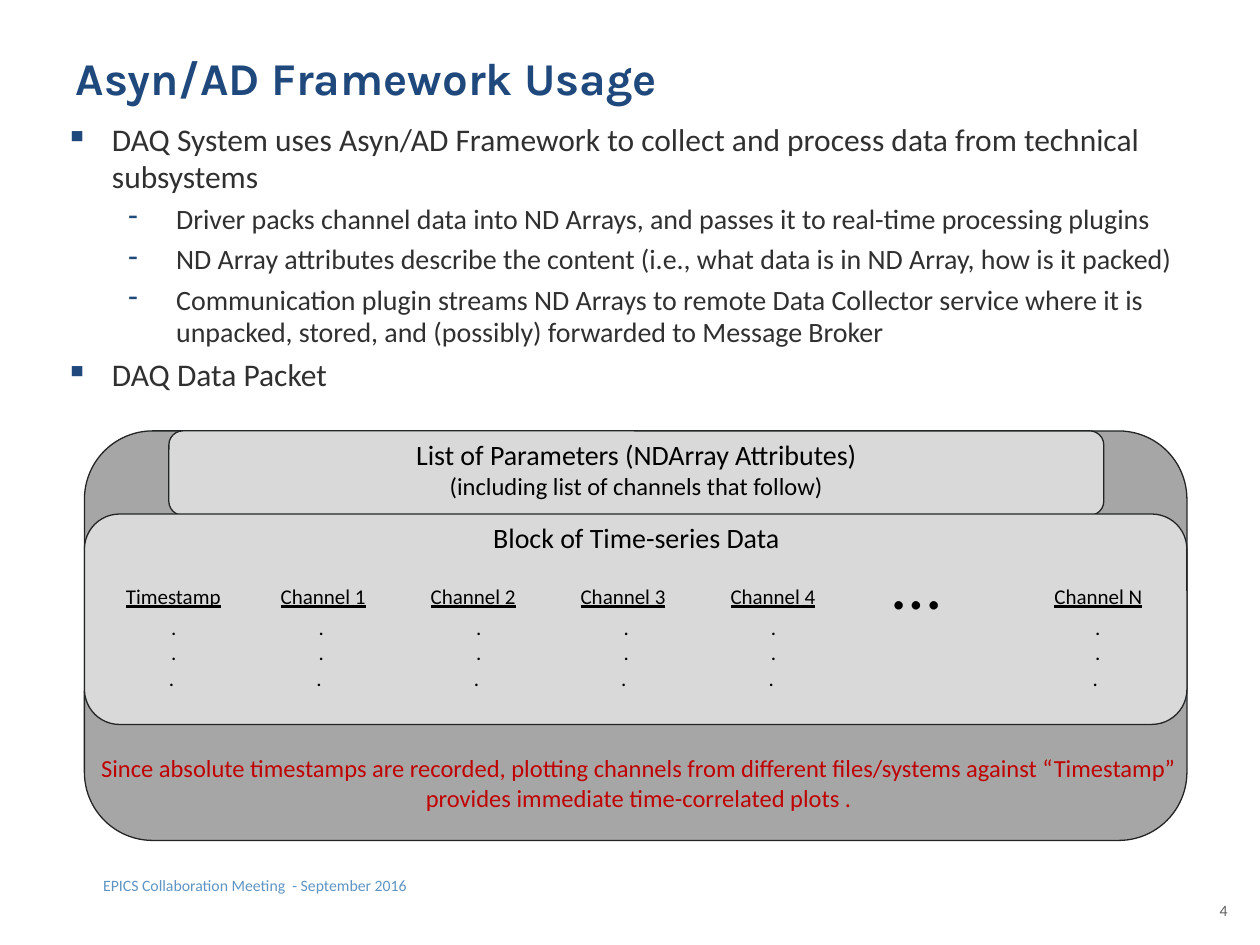
from collections import namedtuple

from lxml.etree import SubElement
from pptx import Presentation
from pptx.dml.color import RGBColor
from pptx.enum.shapes import MSO_SHAPE
from pptx.enum.text import MSO_ANCHOR, MSO_AUTO_SIZE, PP_ALIGN
from pptx.oxml.ns import qn
from pptx.util import Inches, Pt

Box = namedtuple("Box", "left top width height")

NAVY, TEXT, BLACK = "1F497D", "303030", "000000"
MID_GREY, LIGHT_GREY, OUTLINE = "A6A6A6", "D9D9D9", "232425"
RED, FOOTER_BLUE, NUMBER_GREY = "C00000", "5F95C4", "616161"

# Bullet level: character, text indent, hanging indent, size
LEVELS = [("▪", 0.37, 0.37, 18), ("-", 0.88, 0.38, 16)]

POINTS = [
    (0, "DAQ System uses Asyn/AD Framework to collect and process data from "
        "technical subsystems"),
    (1, "Driver packs channel data into ND Arrays, and passes it to real-time "
        "processing plugins"),
    (1, "ND Array attributes describe the content (i.e., what data is in ND Array, "
        "how is it packed)"),
    (1, "Communication plugin streams ND Arrays to remote Data Collector service "
        "where it is unpacked, stored, and (possibly) forwarded to Message Broker"),
    (0, "DAQ Data Packet"),
]

# Heading, its column on the channel grid, offset of its samples
CHANNELS = [
    ("Timestamp", 0, 0.17),
    ("Channel 1", 1, 0.15),
    ("Channel 2", 2, 0.21),
    ("Channel 3", 3, 0.19),
    ("Channel 4", 4, 0.17),
    ("Channel N", 6.17, 0.16),
]
COLUMN = 1.19


def color(hex_string):
    return RGBColor.from_string(hex_string)


def emu(box):
    return [Inches(length) for length in box]


def inside(box, left, top, width, height):
    """Box whose left and top are measured from the corner of another box."""
    return Box(box.left + left, box.top + top, width, height)


def style(font, size, hex_string, name="Calibri"):
    font.name = name
    font.size = Pt(size)
    font.color.rgb = color(hex_string)


def add_text(slide, box, lines, hex_string, align=PP_ALIGN.CENTER, underline=False):
    """Text box with one paragraph for each (text, size) pair."""
    frame = slide.shapes.add_textbox(*emu(box)).text_frame
    frame.word_wrap = True
    frame.text = "\n".join(text for text, _ in lines)
    for paragraph, (_, size) in zip(frame.paragraphs, lines):
        paragraph.alignment = align
        for run in paragraph.runs:
            style(run.font, size, hex_string)
            if underline:
                run.font.underline = True
    return frame


def add_panel(slide, box, fill):
    panel = slide.shapes.add_shape(MSO_SHAPE.ROUNDED_RECTANGLE, *emu(box))
    panel.shadow.inherit = False
    panel.fill.solid()
    panel.fill.fore_color.rgb = color(fill)
    panel.line.color.rgb = color(OUTLINE)
    panel.line.width = Pt(0.75)


def set_bullet(paragraph, character, indent, hanging):
    properties = paragraph._p.get_or_add_pPr()
    properties.set("marL", str(Inches(indent)))
    properties.set("indent", str(-Inches(hanging)))
    bullet_color = SubElement(properties, qn("a:buClr"))
    SubElement(bullet_color, qn("a:srgbClr"), val=NAVY)
    SubElement(properties, qn("a:buChar"), char=character)


def place_title(slide, box):
    title = slide.shapes.title
    title.left, title.top, title.width, title.height = emu(box)
    frame = title.text_frame
    frame.text = "Asyn/AD Framework Usage"
    frame.auto_size = MSO_AUTO_SIZE.NONE
    frame.vertical_anchor = MSO_ANCHOR.MIDDLE
    heading = frame.paragraphs[0]
    heading.alignment = PP_ALIGN.LEFT
    font = heading.runs[0].font
    style(font, 26, NAVY, "Karla")
    font.bold = True


def place_points(slide, box):
    lines = [(text, LEVELS[level][3]) for level, text in POINTS]
    frame = add_text(slide, box, lines, TEXT, PP_ALIGN.LEFT)
    for position, (paragraph, (level, _)) in enumerate(zip(frame.paragraphs, POINTS)):
        character, indent, hanging, _ = LEVELS[level]
        paragraph.level = level
        set_bullet(paragraph, character, indent, hanging)
        paragraph.line_spacing = 0.97
        if position:
            paragraph.space_before = Pt(4.5)


def place_channels(slide, box):
    for heading, column, offset in CHANNELS:
        left = column * COLUMN
        add_text(slide, inside(box, left, 0, 1.25, 0.3), [(heading, 12)], BLACK,
                 underline=True)
        add_text(slide, inside(box, left + offset, 0.25, 0.92, 0.71),
                 [(".", 12), (".", 12), (". ", 12)], BLACK)
    add_text(slide, inside(box, 6.17, -0.35, 0.83, 0.77), [("… ", 40)], BLACK)


def place_packet(slide, box):
    # Packet with its parameter list and data block
    parameters = inside(box, 0.67, 0, 7.42, 0.67)
    block = inside(box, 0, 0.66, box.width, 1.67)
    add_panel(slide, box, MID_GREY)
    add_panel(slide, parameters, LIGHT_GREY)
    add_panel(slide, block, LIGHT_GREY)

    # Headings
    add_text(slide, parameters,
             [("List of Parameters (NDArray Attributes)", 16),
              ("(including list of channels that follow)", 14)], BLACK)
    add_text(slide, inside(block, 0.67, 0, 7.42, 0.37),
             [("Block of Time-series Data", 16)], BLACK)

    # Channel columns and closing remark
    place_channels(slide, inside(block, 0.08, 0.5, 8.6, 0.96))
    add_text(slide, inside(box, -0.06, 2.51, 8.92, 0.57),
             [("Since absolute timestamps are recorded, plotting channels from "
               "different files/systems against “Timestamp” provides immediate "
               "time-correlated plots .", 14)], RED)


def place_footer(slide, box):
    add_text(slide, inside(box, 0.72, 0, 6.5, 0.25),
             [("EPICS Collaboration Meeting  - September 2016", 9)],
             FOOTER_BLUE, PP_ALIGN.LEFT)
    add_text(slide, inside(box, 9.42, 0.2, 0.42, 0.4), [("4", 9)],
             NUMBER_GREY, PP_ALIGN.RIGHT)


def main():
    presentation = Presentation()
    presentation.slide_width, presentation.slide_height = Inches(10), Inches(7.5)
    slide = presentation.slides.add_slide(presentation.slide_layouts[5])
    place_title(slide, Box(0.5, 0.3, 9, 0.62))
    place_points(slide, Box(0.42, 0.92, 9.25, 5.75))
    place_packet(slide, Box(0.67, 3.42, 8.75, 3.25))
    place_footer(slide, Box(0, 6.9, 10, 0.6))
    presentation.save("out.pptx")


if __name__ == "__main__":
    main()
